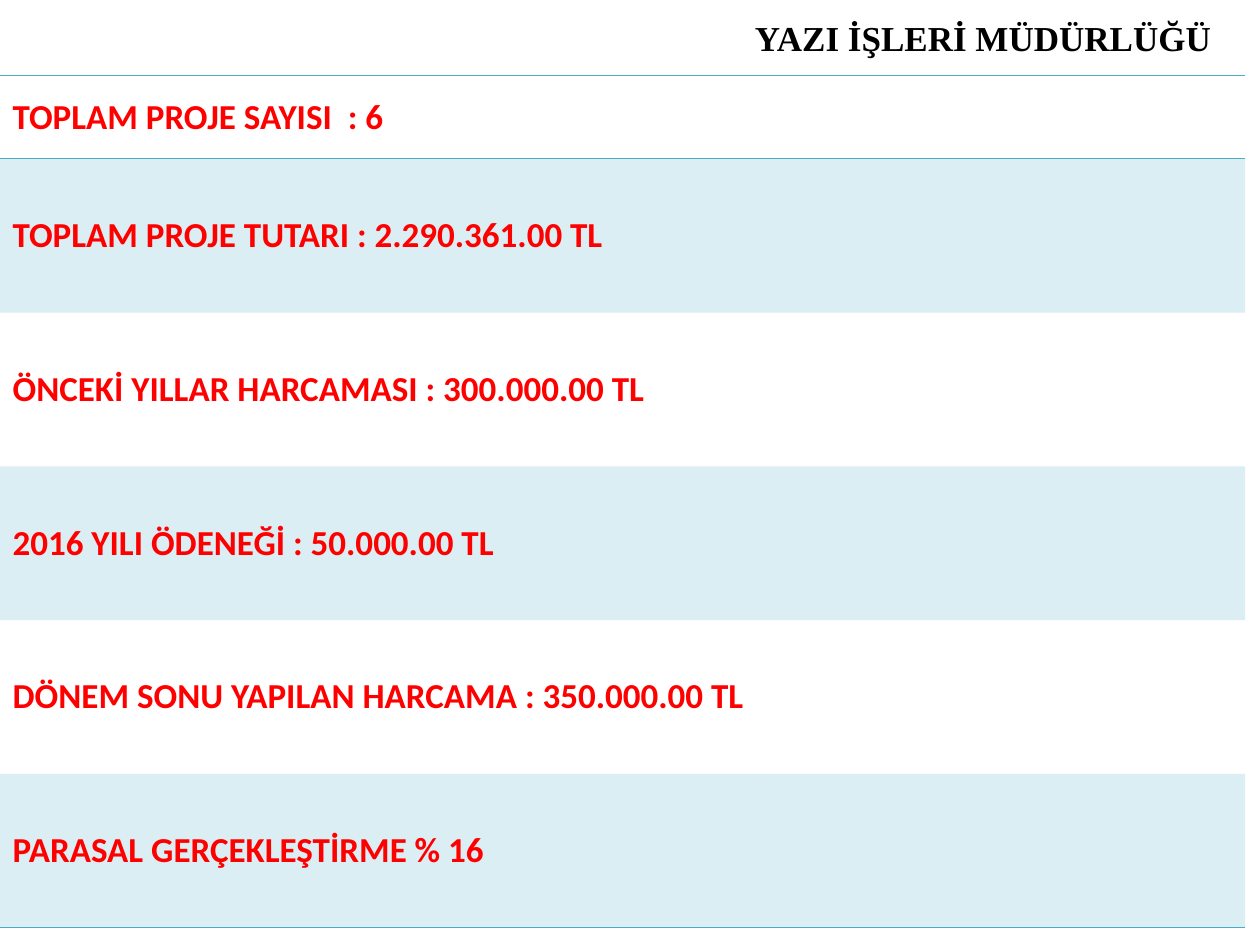
from lxml.etree import SubElement
from pptx import Presentation
from pptx.dml.color import RGBColor
from pptx.enum.text import MSO_ANCHOR as Anchor, PP_ALIGN as Align
from pptx.oxml.ns import qn
from pptx.util import Cm, Pt

COLORS = {"title": "000000", "figure": "FF0000", "accent": "4BACC6"}
FIGURES = [
    "TOPLAM PROJE SAYISI  : 6",
    "TOPLAM PROJE TUTARI : 2.290.361.00 TL",
    "ÖNCEKİ YILLAR HARCAMASI : 300.000.00 TL",
    "2016 YILI ÖDENEĞİ : 50.000.00 TL",
    "DÖNEM SONU YAPILAN HARCAMA : 350.000.00 TL",
    "PARASAL GERÇEKLEŞTİRME % 16",
]
COLUMN_WIDTHS = [15.37, 9.73]
HEADER_HEIGHT, ROW_HEIGHT = 1.68, 3.1


def add_span(para, text, font, color):
    span = para.add_run()
    span.text = text
    span.font.name = font
    span.font.size = Pt(20)
    span.font.bold = True
    span.font.color.rgb = RGBColor.from_string(COLORS[color])


def add_title(page, text):
    box = page.shapes.add_textbox(Cm(10.77), Cm(0.2), Cm(14.05), Cm(1.11))
    frame = box.text_frame
    frame.word_wrap = True
    frame.margin_right = Cm(0.4)
    para = frame.paragraphs[0]
    para.alignment = Align.RIGHT
    add_span(para, text, "Times New Roman", "title")


def set_borders(cell, lined_sides):
    properties = cell._tc.get_or_add_tcPr()
    for side in "LRTB":
        line = SubElement(properties, qn(f"a:ln{side}"), w=str(Pt(1)))
        if side in lined_sides:
            fill = SubElement(line, qn("a:solidFill"))
            SubElement(fill, qn("a:srgbClr"), val=COLORS["accent"])
        else:
            SubElement(line, qn("a:noFill"))


def set_fill(cell, tinted):
    if not tinted:
        cell.fill.background()
        return
    cell.fill.solid()
    cell.fill.fore_color.rgb = RGBColor.from_string(COLORS["accent"])
    color = cell._tc.tcPr.find(qn("a:solidFill"))[0]
    SubElement(color, qn("a:alpha"), val="20000")


def add_figures(page):
    last = len(FIGURES) - 1
    table = page.shapes.add_table(
        len(FIGURES), len(COLUMN_WIDTHS), Cm(0), Cm(1.52),
        Cm(sum(COLUMN_WIDTHS)), Cm(HEADER_HEIGHT + last * ROW_HEIGHT),
    ).table
    table.first_row = False
    table.horz_banding = False
    for column, width in zip(table.columns, COLUMN_WIDTHS):
        column.width = Cm(width)
    lined_sides = {0: "TB", 1: "T", last: "B"}
    for index, (row, text) in enumerate(zip(table.rows, FIGURES)):
        row.height = Cm(ROW_HEIGHT if index else HEADER_HEIGHT)
        for cell in row.cells:
            set_borders(cell, lined_sides.get(index, ""))
            set_fill(cell, index % 2 == 1)
            cell.vertical_anchor = Anchor.MIDDLE
        add_span(row.cells[0].text_frame.paragraphs[0], text, "Calibri", "figure")


def main():
    deck = Presentation()
    deck.slide_width, deck.slide_height = Cm(25.4), Cm(19.05)
    page = deck.slides.add_slide(deck.slide_layouts[6])
    add_figures(page)
    add_title(page, "YAZI İŞLERİ MÜDÜRLÜĞÜ")
    deck.save("out.pptx")


if __name__ == "__main__":
    main()
